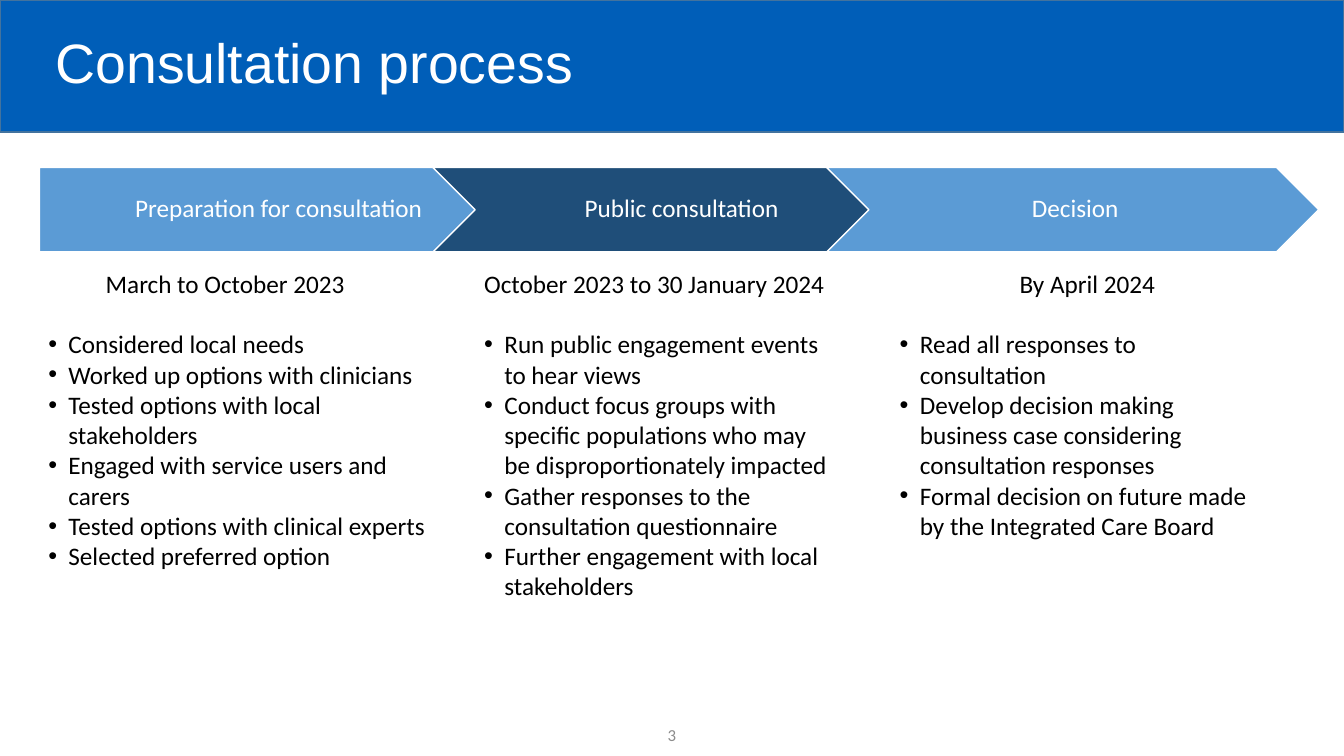
from lxml.etree import SubElement
from pptx import Presentation
from pptx.dml.color import RGBColor
from pptx.enum.shapes import MSO_SHAPE
from pptx.enum.text import MSO_ANCHOR, MSO_AUTO_SIZE, PP_ALIGN
from pptx.oxml.ns import qn
from pptx.util import Pt

BAND_BLUE = RGBColor(0x00, 0x5E, 0xB8)
BAND_LINE = RGBColor(0x43, 0x73, 0x9E)
LIGHT_BLUE = RGBColor(0x5B, 0x9B, 0xD5)
DARK_BLUE = RGBColor(0x1F, 0x4E, 0x79)
WHITE = RGBColor(0xFF, 0xFF, 0xFF)
BLACK = RGBColor(0x00, 0x00, 0x00)
GREY = RGBColor(0x8C, 0x8C, 0x8C)

SLIDE_WIDTH, SLIDE_HEIGHT = 960, 540
STEP_LEFT, STEP_PITCH = 28.1, 281.2
BULLET_INDENT = 14.4

# label, shape, fill, left inset, date, date left and width,
# bullets left, width and height, bullets
STEPS = [
    ("Preparation for consultation", MSO_SHAPE.PENTAGON, LIGHT_BLUE, 7.5,
     "March to October 2023", (68.4, 187), (27.4, 288, 181.5),
     ["Considered local needs",
      "Worked up options with clinicians",
      "Tested options with local stakeholders",
      "Engaged with service users and carers",
      "Tested options with clinical experts",
      "Selected preferred option"]),
    ("Public consultation", MSO_SHAPE.CHEVRON, DARK_BLUE, 5.7,
     "October 2023 to 30 January 2024", (338.8, 260), (338.8, 264.2, 203.5),
     ["Run public engagement events to hear views",
      "Conduct focus groups with specific populations who may be "
      "disproportionately impacted",
      "Gather responses to the consultation questionnaire",
      "Further engagement with local stakeholders"]),
    ("Decision", MSO_SHAPE.CHEVRON, LIGHT_BLUE, 5.7,
     "By April 2024", (721.2, 112.3), (635.6, 264.2, 181.5),
     ["Read all responses to consultation",
      "Develop decision making business case considering consultation "
      "responses",
      "Formal decision on future made by the Integrated Care Board"]),
]


def add_run(p, text, size=18, color=BLACK, font="Calibri"):
    r = p.add_run()
    r.text = text
    r.font.size = Pt(size)
    r.font.name = font
    r.font.color.rgb = color


def add_filled_shape(s, kind, left, top, width, height, fill, line):
    sp = s.shapes.add_shape(kind, Pt(left), Pt(top), Pt(width), Pt(height))
    sp.shadow.inherit = False
    sp.fill.solid()
    sp.fill.fore_color.rgb = fill
    sp.line.color.rgb = line
    sp.line.width = Pt(1)
    return sp


def add_text_frame(s, left, top, width, height, wrap=True):
    tf = s.shapes.add_textbox(Pt(left), Pt(top), Pt(width), Pt(height)).text_frame
    tf.word_wrap = wrap
    return tf


def add_title(s, text):
    """Fill the title placeholder and put the blue band behind it."""
    title = s.shapes.title
    title.left, title.top = Pt(32.4), Pt(25.9)
    title.width, title.height = Pt(895.7), Pt(42.5)
    tf = title.text_frame
    tf.auto_size = MSO_AUTO_SIZE.NONE
    tf.vertical_anchor = MSO_ANCHOR.MIDDLE
    p = tf.paragraphs[0]
    p.alignment = PP_ALIGN.LEFT
    p.line_spacing = 0.9
    add_run(p, text, 39.6, WHITE, "Arial")
    band = add_filled_shape(s, MSO_SHAPE.RECTANGLE, 0, 0, SLIDE_WIDTH, 94.3,
                            BAND_BLUE, BAND_LINE)
    title.element.addprevious(band.element)


def add_step_arrow(s, label, kind, left, fill, left_inset):
    sp = add_filled_shape(s, kind, left, 119.7, 351.4, 60.2, fill, WHITE)
    tf = sp.text_frame
    tf.word_wrap = True
    tf.vertical_anchor = MSO_ANCHOR.MIDDLE
    tf.margin_left, tf.margin_right = Pt(left_inset), Pt(2)
    p = tf.paragraphs[0]
    p.alignment = PP_ALIGN.CENTER
    p.line_spacing = 0.9
    add_run(p, label, color=WHITE)


def add_bullets(s, left, width, height, items):
    tf = add_text_frame(s, left, 231.3, width, height)
    for i, item in enumerate(items):
        p = tf.add_paragraph() if i else tf.paragraphs[0]
        pPr = p._p.get_or_add_pPr()
        pPr.set("marL", str(Pt(BULLET_INDENT)))
        pPr.set("indent", str(-Pt(BULLET_INDENT)))
        SubElement(pPr, qn("a:buFont")).set("typeface", "Arial")
        SubElement(pPr, qn("a:buChar")).set("char", "•")
        add_run(p, item)


def add_page_number(s, number):
    tf = add_text_frame(s, 372, 510.5, 216, 28.8)
    tf.vertical_anchor = MSO_ANCHOR.MIDDLE
    p = tf.paragraphs[0]
    p.alignment = PP_ALIGN.CENTER
    add_run(p, number, 12, GREY)


def main():
    prs = Presentation()
    prs.slide_width, prs.slide_height = Pt(SLIDE_WIDTH), Pt(SLIDE_HEIGHT)
    s = prs.slides.add_slide(prs.slide_layouts[5])
    add_title(s, "Consultation process")
    for i, (label, kind, fill, inset, date, date_box, bullet_box, items) in enumerate(STEPS):
        add_step_arrow(s, label, kind, STEP_LEFT + i * STEP_PITCH, fill, inset)
        date_left, date_width = date_box
        tf = add_text_frame(s, date_left, 188.2, date_width, 29.1, wrap=False)
        add_run(tf.paragraphs[0], date)
        add_bullets(s, *bullet_box, items)
    add_page_number(s, "3")
    prs.save("out.pptx")


if __name__ == "__main__":
    main()
